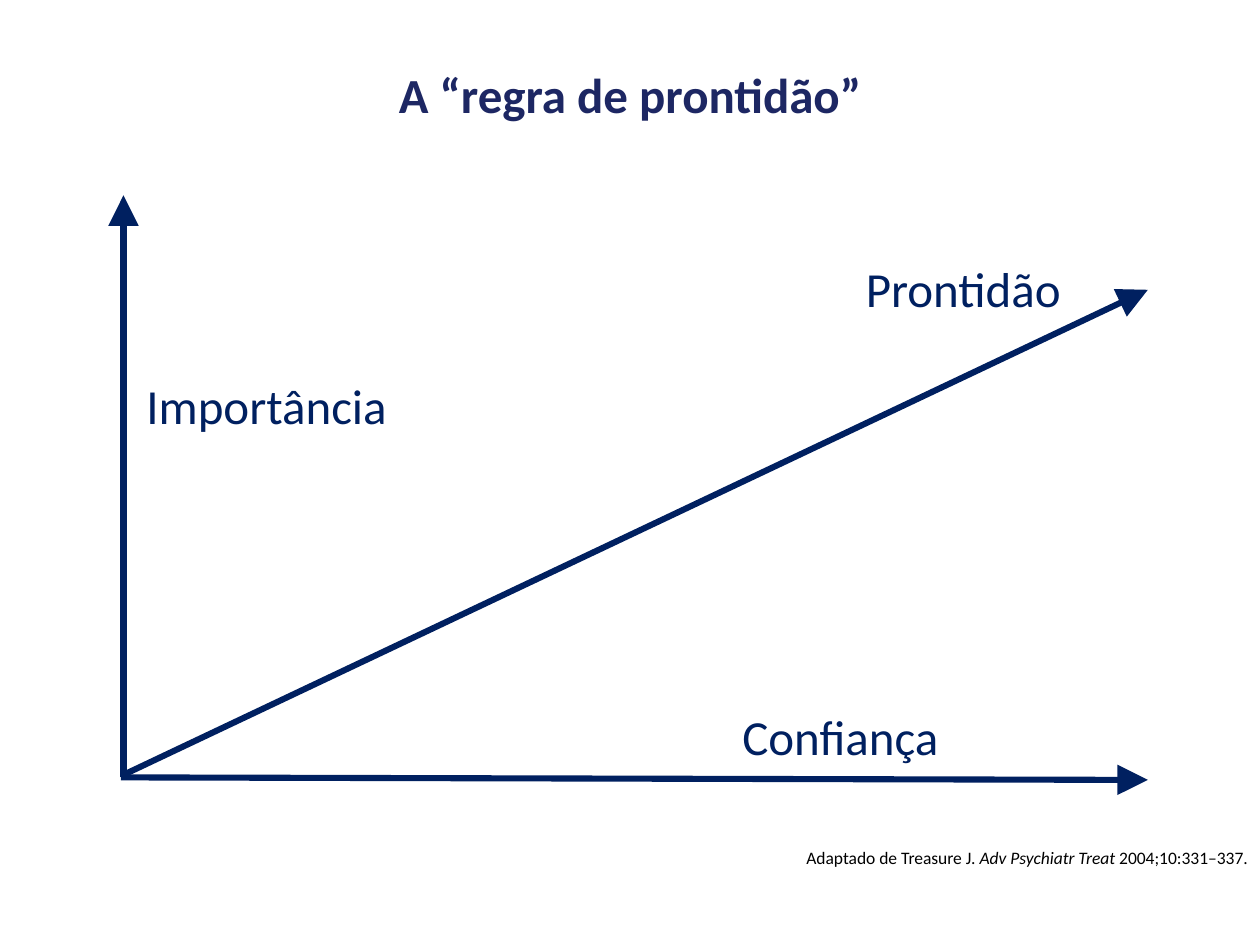
from dataclasses import dataclass

from lxml import etree
from pptx import Presentation
from pptx.dml.color import RGBColor
from pptx.enum.shapes import MSO_CONNECTOR
from pptx.enum.text import MSO_ANCHOR, PP_ALIGN
from pptx.oxml.ns import qn
from pptx.util import Inches, Pt

STRAIGHT = MSO_CONNECTOR.STRAIGHT
MIDDLE, TOP = MSO_ANCHOR.MIDDLE, MSO_ANCHOR.TOP
CENTER, RIGHT = PP_ALIGN.CENTER, PP_ALIGN.RIGHT


@dataclass(frozen=True)
class Theme:
    font: str = "Calibri"
    title: RGBColor = RGBColor(0x1D, 0x27, 0x63)
    navy: RGBColor = RGBColor(0x00, 0x20, 0x60)
    black: RGBColor = RGBColor(0x00, 0x00, 0x00)
    heading_size: Pt = Pt(28)
    source_size: Pt = Pt(10)
    line_width: Pt = Pt(3.5)


THEME = Theme()


def set_text(shape, runs, color, size, align=CENTER, anchor=TOP):
    """Fill a shape with one paragraph; runs are (text, extra font values)."""
    tf = shape.text_frame
    tf.word_wrap = True
    tf.vertical_anchor = anchor
    p = tf.paragraphs[0]
    p.alignment = align
    for text, extra in runs:
        r = p.add_run()
        r.text = text
        r.font.color.rgb = color
        for name, value in {"name": THEME.font, "size": size, **extra}.items():
            setattr(r.font, name, value)


def add_text(s, box, *args, **kwargs):
    tb = s.shapes.add_textbox(*map(Inches, box))
    set_text(tb, *args, **kwargs)


def add_arrow(s, start, end):
    line = s.shapes.add_connector(STRAIGHT, *map(Inches, start + end))
    line.line.color.rgb = THEME.navy
    line.line.width = THEME.line_width
    etree.SubElement(line.line._get_or_add_ln(), qn("a:tailEnd"),
                     type="triangle", w="lg", len="lg")
    etree.SubElement(line._element.spPr, qn("a:effectLst"))


def add_title(s, box):
    title = s.shapes.title
    title.left, title.top, title.width, title.height = map(Inches, box)
    set_text(title, [("A “regra de prontidão”", {"bold": True})],
             THEME.title, THEME.heading_size, anchor=MIDDLE)


def add_readiness_chart(s, box):
    """Draw the two axes and the diagonal, with a label beside each."""
    x, y, w, h = box
    right, bottom = x + w, y + h
    arrows = [
        ((x + 0.02, bottom - 0.03), (right, y + 0.75)),
        ((x - 0.02, bottom), (right, bottom + 0.02)),
        ((x, bottom), (x, y)),
    ]
    for start, end in arrows:
        add_arrow(s, start, end)

    labels = [
        ("Importância", x - 0.09, y + 1.38, 2.45),
        ("Confiança", x + 4.35, bottom - 0.61, 2.68),
        ("Prontidão", x + 5.44, y + 0.45, 2.45),
    ]
    for text, left, top, width in labels:
        add_text(s, (left, top, width, 0.57), [(text, {})],
                 THEME.navy, THEME.heading_size)


def add_source(s, box):
    runs = [
        ("Adaptado de Treasure J. ", {}),
        ("Adv Psychiatr Treat", {"italic": True}),
        (" 2004;10:331–337.", {}),
    ]
    add_text(s, box, runs, THEME.black, THEME.source_size, align=RIGHT)


def main():
    prs = Presentation()
    prs.slide_width, prs.slide_height = Inches(10), Inches(7.5)
    s = prs.slides.add_slide(prs.slide_layouts[5])
    add_title(s, (0.5, 0.32, 9, 0.85))
    add_readiness_chart(s, (0.98, 1.55, 8.13, 4.62))
    add_source(s, (6.09, 6.67, 3.91, 0.27))
    prs.save("out.pptx")


if __name__ == "__main__":
    main()
